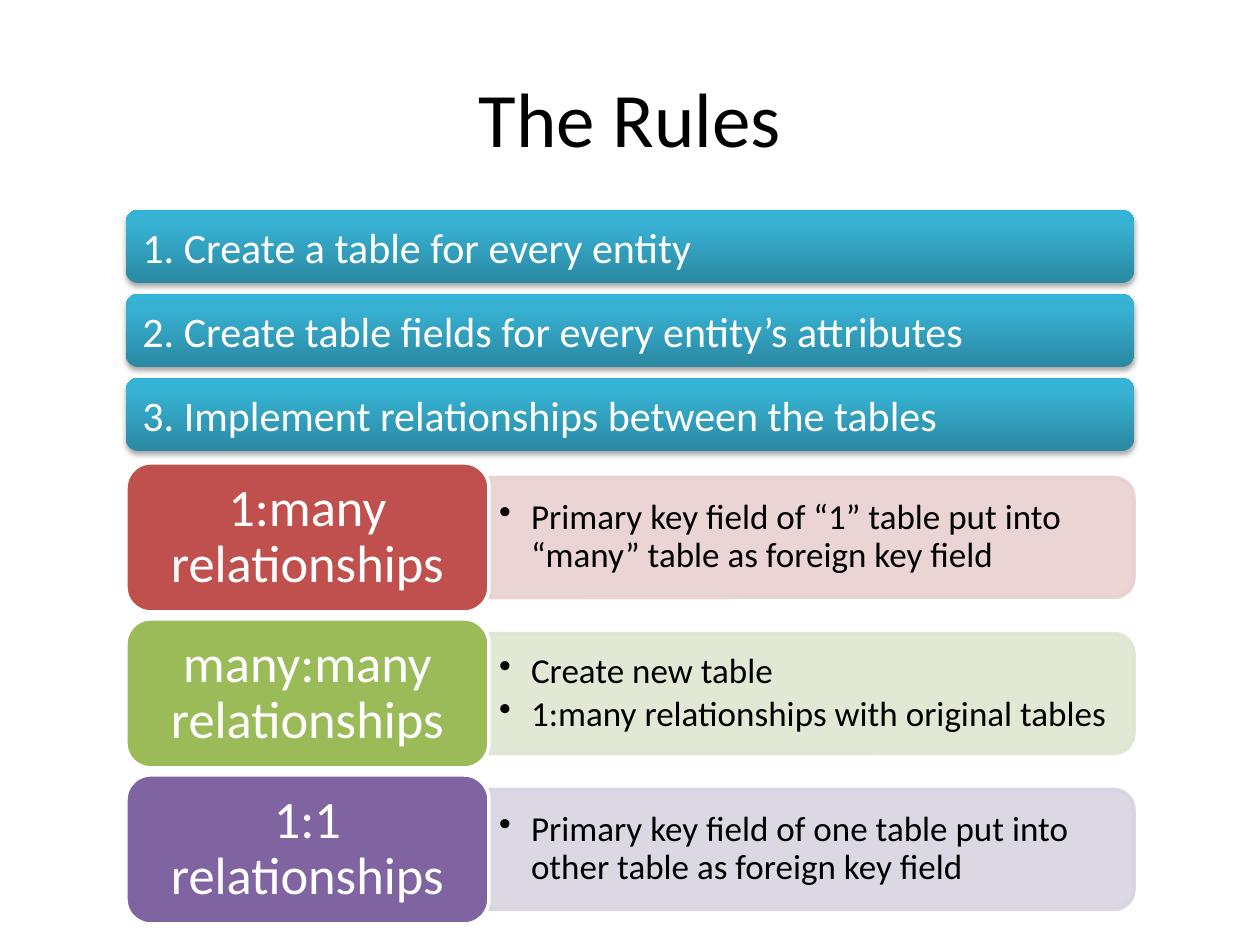
from copy import deepcopy

from lxml import etree
from pptx import Presentation
from pptx.dml.color import RGBColor
from pptx.enum.shapes import MSO_SHAPE
from pptx.enum.text import MSO_ANCHOR, PP_ALIGN
from pptx.oxml.ns import qn
from pptx.util import Pt

ROUNDED = MSO_SHAPE.ROUNDED_RECTANGLE
TWO_ROUNDED = MSO_SHAPE.ROUND_2_SAME_RECTANGLE
LEFT, CENTER = PP_ALIGN.LEFT, PP_ALIGN.CENTER
MIDDLE = MSO_ANCHOR.MIDDLE

FONT = "Calibri"
COLORS = {
    "text": "000000", "white": "FFFFFF", "shadow": "000000",
    "bar_dark": "2A88A2", "bar_mid": "37B1D2", "bar_light": "34B4D6",
    "red": "C0504D", "red_pale": "E8D0D0",
    "green": "9BBB59", "green_pale": "DEE7D1",
    "purple": "8064A2", "purple_pale": "D8D3E0",
}
BAR_STOPS = [(0, "bar_dark"), (0.8, "bar_mid"), (1, "bar_light")]

RULES = [
    "1. Create a table for every entity",
    "2. Create table fields for every entity’s attributes",
    "3. Implement relationships between the tables",
]
RELATIONSHIPS = [
    ("1:many relationships", "red",
     ["Primary key field of “1” table put into “many” table as foreign key field"]),
    ("many:many relationships", "green",
     ["Create new table", "1:many relationships with original tables"]),
    ("1:1 relationships", "purple",
     ["Primary key field of one table put into other table as foreign key field"]),
]


def px(n):
    return round(n * 914400 / 126)


def rgb(name):
    return RGBColor.from_string(COLORS[name])


def add_run(p, text, size, color):
    r = p.add_run()
    r.text = text
    r.font.name, r.font.size = FONT, Pt(size)
    r.font.color.rgb = rgb(color)


def set_frame(tf, margin_x, margin_y):
    tf.word_wrap = True
    tf.vertical_anchor = MIDDLE
    tf.margin_left = tf.margin_right = px(margin_x)
    tf.margin_top = tf.margin_bottom = px(margin_y)


def add_block(slide, kind, x, y, w, h, fill, line):
    sp = slide.shapes.add_shape(kind, px(x), px(y), px(w), px(h))
    sp.shadow.inherit = False
    sp.fill.solid()
    sp.fill.fore_color.rgb = rgb(fill)
    sp.line.color.rgb = rgb(line)
    sp.line.width = Pt(2)
    return sp


def set_opacity(sp, percent):
    """Apply one opacity to the fill and the outline."""
    for clr in sp._element.spPr.iter(qn("a:srgbClr")):
        etree.SubElement(clr, qn("a:alpha"), val=str(percent * 1000))


def set_bar_gradient(sp):
    sp.fill.gradient()
    stops = sp._element.spPr.find(".//" + qn("a:gsLst"))
    stops.append(deepcopy(stops[-1]))
    for stop, (position, color) in zip(sp.fill.gradient_stops, BAR_STOPS):
        stop.position = position
        stop.color.rgb = rgb(color)
    sp.fill.gradient_angle = 90


def add_drop_shadow(sp):
    sp.shadow.inherit = False
    effects = sp._element.spPr.find(qn("a:effectLst"))
    shadow = etree.SubElement(effects, qn("a:outerShdw"), blurRad="40000",
                              dist="23000", dir="5400000", rotWithShape="0")
    clr = etree.SubElement(shadow, qn("a:srgbClr"), val=COLORS["shadow"])
    etree.SubElement(clr, qn("a:alpha"), val="35000")


def add_bullet(p, indent):
    pPr = p._p.get_or_add_pPr()
    pPr.set("marL", str(px(indent)))
    pPr.set("indent", str(-px(indent)))
    etree.SubElement(pPr, qn("a:buChar"), char="•")


def place_title(slide, x, y, w, h):
    title = slide.shapes.title
    title.left, title.top, title.width, title.height = map(px, (x, y, w, h))
    tf = title.text_frame
    tf.vertical_anchor = MIDDLE
    p = tf.paragraphs[0]
    p.alignment = CENTER
    add_run(p, "The Rules", 44, "text")


def add_rule_bar(slide, x, y, w, h, text):
    sp = slide.shapes.add_shape(ROUNDED, px(x), px(y), px(w), px(h))
    set_bar_gradient(sp)
    sp.line.fill.background()
    add_drop_shadow(sp)
    set_frame(sp.text_frame, 13, 6)
    p = sp.text_frame.paragraphs[0]
    p.alignment = LEFT
    add_run(p, text, 24, "white")


def add_relationship(slide, x, y, w, h, heading, color, points):
    """Coloured heading on the left, pale panel of bullets on the right."""
    head_w, panel_h = 363, 120
    panel_x, panel_w = x + head_w, w - head_w
    center_x, center_y = panel_x + panel_w / 2, y + h / 2

    # Turned a quarter so that the two rounded corners face right
    panel = add_block(slide, TWO_ROUNDED, center_x - panel_h / 2,
                      center_y - panel_w / 2, panel_h, panel_w,
                      color + "_pale", color + "_pale")
    panel.rotation = 90
    set_opacity(panel, 90)

    box = slide.shapes.add_textbox(px(panel_x), px(center_y - 54),
                                   px(panel_w - 6), px(108))
    tf = box.text_frame
    set_frame(tf, 10, 5)
    for i, point in enumerate(points):
        p = tf.add_paragraph() if i else tf.paragraphs[0]
        add_bullet(p, 32)
        p.level = 1
        p.alignment = LEFT
        p.line_spacing = 0.9
        p.space_after = Pt(3)
        add_run(p, point, 20, "text")

    head = add_block(slide, ROUNDED, x, y, head_w, h, color, "white")
    set_frame(head.text_frame, 15, 8)
    p = head.text_frame.paragraphs[0]
    p.alignment = CENTER
    p.line_spacing = 0.9
    add_run(p, heading, 30, "white")


def main():
    prs = Presentation()
    prs.slide_width, prs.slide_height = px(1260), px(945)
    slide = prs.slides.add_slide(prs.slide_layouts[5])
    left, width = 126, 1008

    place_title(slide, 63, 38, 1134, 158)
    for i, relationship in enumerate(RELATIONSHIPS):
        add_relationship(slide, left, 463 + i * 156, width, 149, *relationship)
    for i, rule in enumerate(RULES):
        add_rule_bar(slide, left, 210 + i * 84, width, 73, rule)

    prs.save("out.pptx")


if __name__ == "__main__":
    main()
